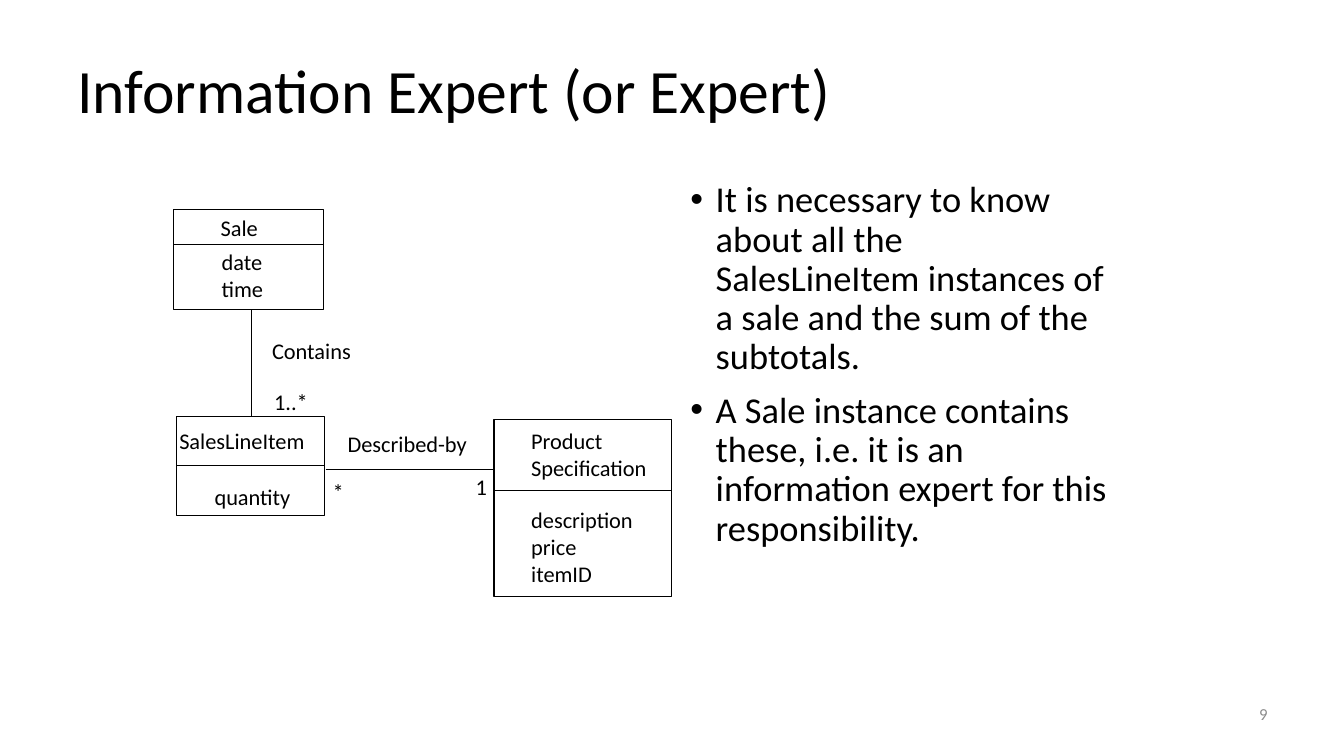
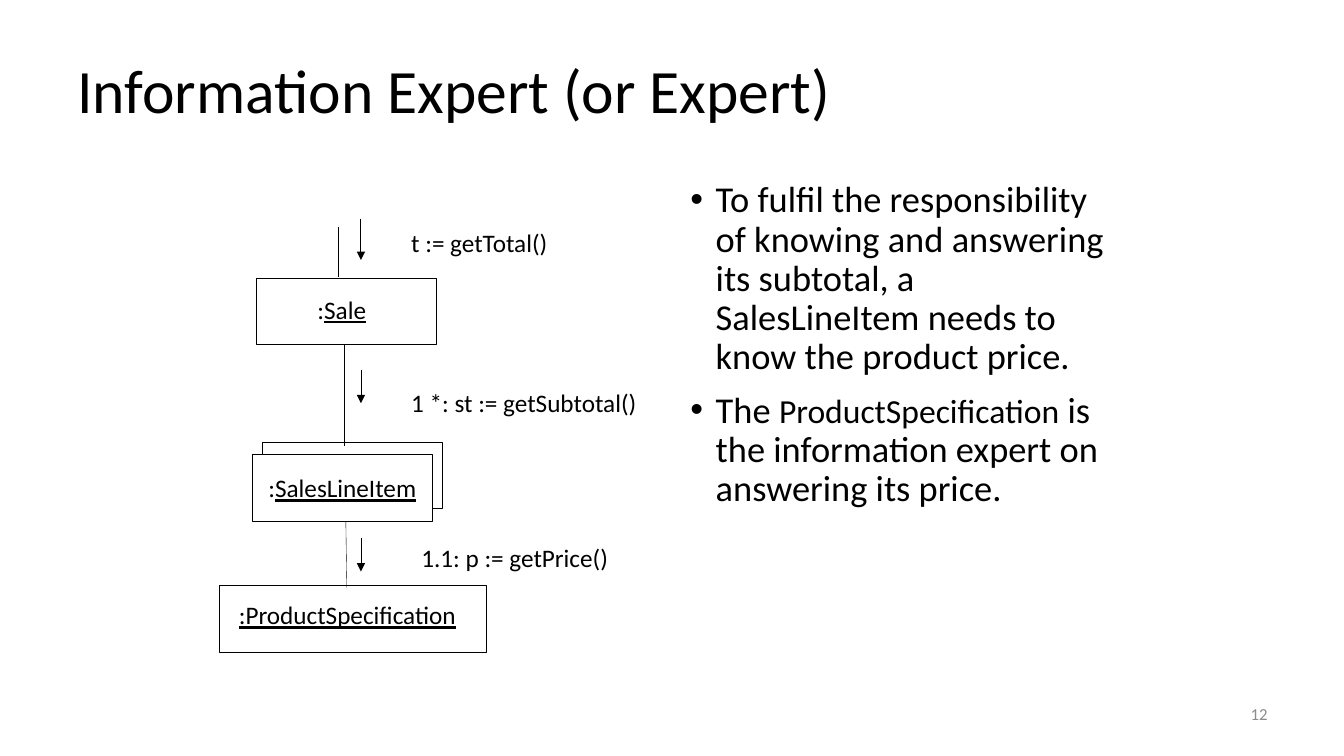
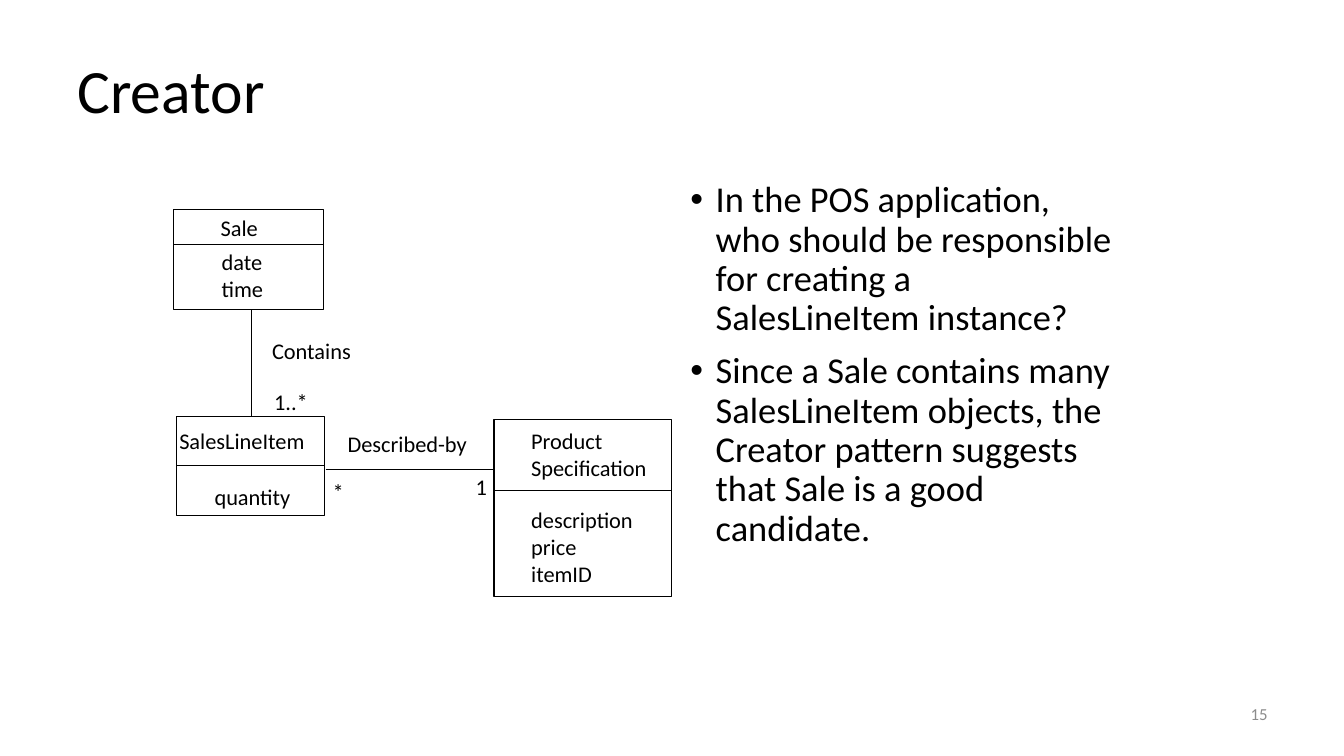
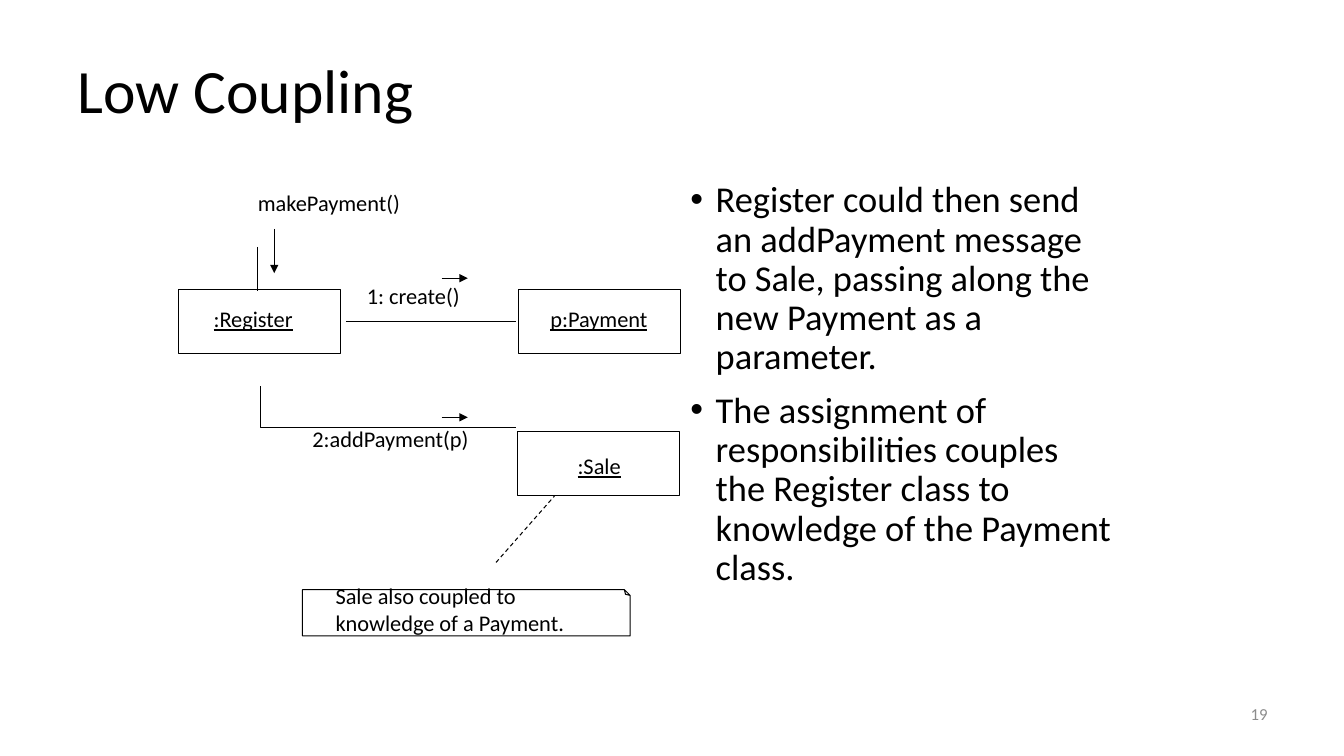
from lxml.etree import SubElement
from pptx import Presentation
from pptx.dml.color import RGBColor
from pptx.enum.dml import MSO_LINE
from pptx.enum.shapes import MSO_CONNECTOR, MSO_SHAPE
from pptx.enum.text import MSO_ANCHOR, MSO_AUTO_SIZE, PP_ALIGN
from pptx.oxml.ns import qn
from pptx.util import Emu, Pt

SCALE = 9144  # EMU in one px, 100 px to the inch
FONT = "Calibri"
COLORS = {"ink": "000000", "paper": "FFFFFF", "number": "8C8C8C"}
THIN, NORMAL = 0.25, 0.75

BODY_FORMAT = {"line_spacing": 0.9, "space_before": Pt(10)}
TITLE_FORMAT = {"line_spacing": 0.9}
NUMBER_FORMAT = {"alignment": PP_ALIGN.RIGHT}


def px(*values):
    return [Emu(v * SCALE) for v in values]


def color(name):
    return RGBColor.from_string(COLORS[name])


def set_all(obj, values):
    for name, value in values.items():
        setattr(obj, name, value)


def write(tf, paragraphs, size, ink="ink", fmt=None):
    """Fill a text frame; a paragraph is a string or a list of (text, font values)."""
    for i, runs in enumerate(paragraphs):
        p = tf.paragraphs[0] if i == 0 else tf.add_paragraph()
        set_all(p, fmt or {})
        for text, font in [(runs, {})] if isinstance(runs, str) else runs:
            r = p.add_run()
            r.text = text
            set_all(r.font, {"name": FONT, "size": Pt(size), **font})
            r.font.color.rgb = color(ink)


def text_box(s, box, paragraphs, size, ink="ink", fmt=None, anchor=MSO_ANCHOR.TOP):
    tf = s.shapes.add_textbox(*px(*box)).text_frame
    set_all(tf, {"word_wrap": True, "vertical_anchor": anchor})
    write(tf, paragraphs, size, ink, fmt)
    return tf


def label(s, x, y, w, *lines, size=16):
    """Unwrapped diagram text whose height follows from its lines."""
    line_height = round(size * 5 / 3)
    tf = text_box(s, (x, y, w, 10 + line_height * len(lines)), lines, size)
    set_all(tf, {"word_wrap": False, "auto_size": MSO_AUTO_SIZE.SHAPE_TO_FIT_TEXT})


def underlined(text, prefix=""):
    runs = [(prefix, {})] if prefix else []
    return runs + [(text, {"underline": True})]


def outline(sp, width=NORMAL):
    sp.line.color.rgb = color("ink")
    sp.line.width = Pt(width)


def style_shape(sp, fill=None, width=NORMAL):
    sp.shadow.inherit = False
    if fill:
        sp.fill.solid()
        sp.fill.fore_color.rgb = color(fill)
    else:
        sp.fill.background()
    outline(sp, width)
    return sp


def box(s, x, y, w, h, fill=None, kind=MSO_SHAPE.RECTANGLE):
    return style_shape(s.shapes.add_shape(kind, *px(x, y, w, h)), fill)


def line(s, x1, y1, x2, y2, width=NORMAL, arrow=False, dash=None):
    c = s.shapes.add_connector(MSO_CONNECTOR.STRAIGHT, *px(x1, y1, x2, y2))
    outline(c, width)
    if dash:
        c.line.dash_style = dash
    props = c.element.spPr
    if arrow:
        SubElement(props.find(qn("a:ln")), qn("a:tailEnd"), type="triangle")
    SubElement(props, qn("a:effectLst"))


def class_box(s, x, y, w, h, header):
    """UML class outline with a rule below its header."""
    box(s, x, y, w, h)
    line(s, x, y + header, x + w, y + header)


def note_box(s, x, y, w, h):
    """Sheet with its top right corner folded."""
    props = box(s, x, y, w, h, kind=MSO_SHAPE.FOLDED_CORNER).element.spPr
    props.find(qn("a:xfrm")).set("flipV", "1")
    guides = props.find(qn("a:prstGeom")).get_or_add_avLst()
    SubElement(guides, qn("a:gd"), name="adj", fmla="val 12500")


def base_slide(prs, number, title, bullets):
    s = prs.slides.add_slide(prs.slide_layouts[6])
    text_box(s, (956, 683, 311, 50), [str(number)], 12, "number",
             NUMBER_FORMAT, MSO_ANCHOR.MIDDLE)
    text_box(s, (67, 30, 1200, 125), [title], 44, fmt=TITLE_FORMAT,
             anchor=MSO_ANCHOR.MIDDLE)
    tf = text_box(s, (675, 175, 441, 495), bullets, 26, fmt=BODY_FORMAT)
    for p in tf.paragraphs:
        props = p._p.get_or_add_pPr()
        props.set("marL", str(25 * SCALE))
        props.set("indent", str(-25 * SCALE))
        SubElement(props, qn("a:buFont"), typeface="Arial")
        SubElement(props, qn("a:buChar"), char="•")
    return s


def domain_model(s):
    class_box(s, 172, 208, 149, 99, 35)
    label(s, 209, 208, 58, "Sale")
    label(s, 210, 241, 63, "date", "time")

    line(s, 249, 308, 249, 414)
    label(s, 260, 330, 99, "Contains")
    label(s, 262, 380, 54, "1..*")

    class_box(s, 175, 413, 147, 98, 49)
    label(s, 168, 419, 146, "SalesLineItem")
    label(s, 203, 474, 96, "quantity")

    line(s, 323, 465, 490, 465, THIN)
    label(s, 320, 469, 31, "*")
    label(s, 335, 422, 140, "Described-by")
    label(s, 462, 464, 32, "1")

    class_box(s, 490, 416, 176, 176, 71)
    label(s, 517, 419, 136, "Product", "Specification")
    label(s, 517, 497, 122, "description", "price", "itemID")


def price_messages(s):
    w, h = 179, 66
    line(s, 336, 225, 336, 275)
    line(s, 358, 217, 358, 258, arrow=True)
    label(s, 398, 221, 157, "t := getTotal()", size=18)
    box(s, 254, 276, w, h)
    label(s, 305, 287, 69, underlined("Sale", ":"), size=18)

    box(s, 260, 439, w, h, "paper")
    item = box(s, 250, 451, w, h, "paper")
    item.text_frame.word_wrap = False
    write(item.text_frame, [underlined("SalesLineItem", ":")], 18,
          fmt={"alignment": PP_ALIGN.CENTER})
    line(s, 342, 342, 342, 442)
    label(s, 398, 379, 247, "1 *: st := getSubtotal()", size=18)

    box(s, 218, 581, 265, h)
    label(s, 227, 590, 238, underlined(":ProductSpecification"), size=18)
    line(s, 343, 517, 344, 583, THIN)
    label(s, 408, 533, 208, "1.1: p := getPrice()", size=18)
    for y in (367, 534):
        line(s, 358, y, 358, y + 33, THIN, arrow=True)


def payment_messages(s):
    for x, y in ((177, 287), (514, 287), (513, 428)):
        box(s, x, y, 161, 64)
    label(s, 202, 298, 100, underlined(":Register"))
    label(s, 536, 298, 118, underlined("p:Payment"))
    label(s, 563, 444, 63, underlined(":Sale"))

    label(s, 246, 183, 163, "makePayment()")
    line(s, 255, 245, 255, 289)
    line(s, 272, 227, 272, 271, arrow=True)

    label(s, 354, 275, 114, "1: create()")
    line(s, 343, 319, 512, 319, THIN)
    label(s, 300, 417, 177, "2:addPayment(p)")
    elbow = s.shapes.build_freeform(258, 383, scale=SCALE)
    elbow.add_line_segments([(258, 424), (512, 424)], close=False)
    style_shape(elbow.convert_to_shape(), width=THIN)
    for y in (276, 414):
        line(s, 438, y, 464, y, THIN, arrow=True)

    note_box(s, 300, 585, 325, 46)
    label(s, 323, 573, 250, "Sale also coupled to", "knowledge of a Payment.")
    line(s, 492, 558, 550, 492, dash=MSO_LINE.DASH)


def main():
    prs = Presentation()
    prs.slide_width, prs.slide_height = px(1333, 750)

    slides = [
        (9, "Information Expert (or Expert)", [
            "It is necessary to know about all the SalesLineItem instances of "
            "a sale and the sum of the subtotals.",
            "A Sale instance contains these, i.e. it is an information expert "
            "for this responsibility.",
        ], domain_model),
        (12, "Information Expert (or Expert)", [
            "To fulfil the responsibility of knowing and answering its subtotal, "
            "a SalesLineItem needs to know the product price.",
            [("The ", {}), ("ProductSpecification", {"size": Pt(24)}),
             (" is the information expert on answering its price.", {})],
        ], price_messages),
        (15, "Creator", [
            "In the POS application, who should be responsible for creating a "
            "SalesLineItem instance?",
            "Since a Sale contains many SalesLineItem objects, the Creator "
            "pattern suggests that Sale is a good candidate.",
        ], domain_model),
        (19, "Low Coupling", [
            "Register could then send an addPayment message to Sale, passing "
            "along the new Payment as a parameter.",
            "The assignment of responsibilities couples the Register class to "
            "knowledge of the Payment class.",
        ], payment_messages),
    ]
    for number, title, bullets, draw_diagram in slides:
        draw_diagram(base_slide(prs, number, title, bullets))

    prs.save("out.pptx")


if __name__ == "__main__":
    main()
